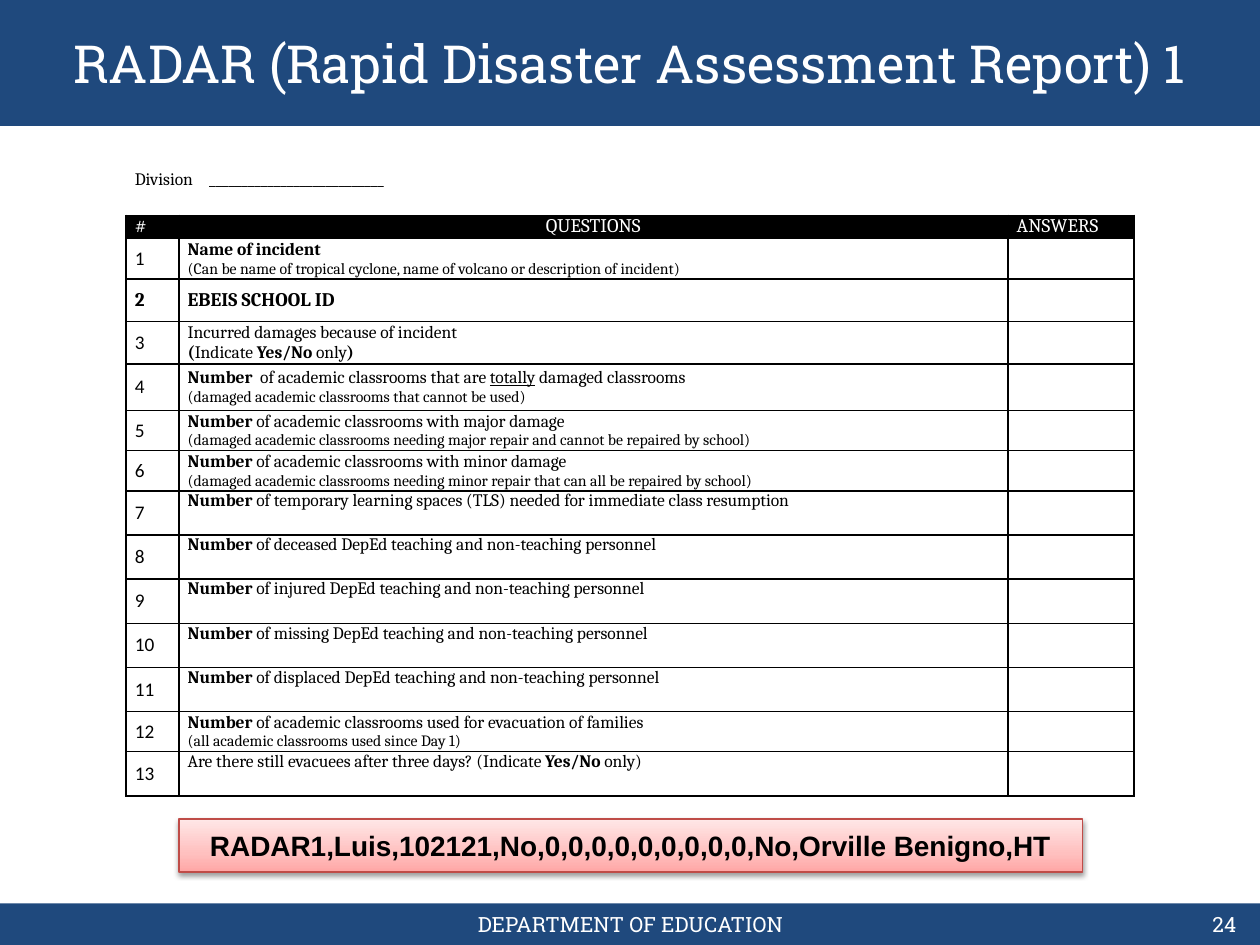
from copy import deepcopy
from dataclasses import dataclass

from pptx import Presentation
from pptx.dml.color import RGBColor
from pptx.enum.shapes import MSO_SHAPE
from pptx.enum.text import MSO_ANCHOR, PP_ALIGN
from pptx.oxml.ns import qn
from pptx.util import Inches, Pt
from lxml import etree

RECT = MSO_SHAPE.RECTANGLE
TOP, MIDDLE, BOTTOM = MSO_ANCHOR.TOP, MSO_ANCHOR.MIDDLE, MSO_ANCHOR.BOTTOM
LEFT, CENTER, RIGHT = PP_ALIGN.LEFT, PP_ALIGN.CENTER, PP_ALIGN.RIGHT


@dataclass(frozen=True)
class Theme:
    blue: str = "1F497D"
    white: str = "FFFFFF"
    black: str = "000000"
    edge: str = "BF4C48"
    glow: tuple = ((0, "FFA6A5"), (0.35, "FFC0BF"), (1, "FFE7E7"))
    slab: str = "Roboto Slab"
    serif: str = "Cambria"
    sans: str = "Calibri"
    code: str = "Arial"
    title: int = 30
    answer: int = 16
    foot: int = 12
    head: int = 11
    body: int = 10
    note: int = 9


COLS = (0.42, 6.58, 1)
HEAD = (("#", LEFT), ("QUESTIONS", CENTER), ("ANSWERS", LEFT))
TOP_ROWS = (0.34, 0.2, 0.18)
STAFF = " DepEd teaching and non-teaching personnel"
ID_ROW = 2
# Row height, question, note; *bold*, ~underlined~
ASKS = [
    (0.32, "*Name of incident*",
     "(Can be name of tropical cyclone, name of volcano or description of incident)"),
    (0.34, "*EBEIS SCHOOL ID*", ""),
    (0.33, "Incurred damages because of incident\n*(*Indicate* Yes/No *only*)*", ""),
    (0.37, "*Number  *of academic classrooms that are ~totally~ damaged classrooms",
     "(damaged academic classrooms that cannot be used)"),
    (0.32, "*Number *of academic classrooms with major damage",
     "(damaged academic classrooms needing major repair and cannot be repaired by school)"),
    (0.32, "*Number *of academic classrooms with minor damage",
     "(damaged academic classrooms needing minor repair that can all be repaired by school)"),
    (0.35, "*Number* of temporary learning spaces (TLS) needed for immediate class resumption", ""),
    *[(0.35, f"*Number* of {state}{STAFF}", "")
      for state in ("deceased", "injured", "missing", "displaced")],
    (0.32, "*Number *of academic classrooms used for evacuation of families",
     "(all academic classrooms used since Day 1)"),
    (0.35, "Are there still evacuees after three days? (Indicate *Yes/No* only)", ""),
]


class Deck:
    def __init__(self, theme):
        self.theme = theme
        self.prs = Presentation()
        self.prs.slide_width, self.prs.slide_height = Inches(10), Inches(7.5)
        self.slide = self.prs.slides.add_slide(self.prs.slide_layouts[5])

    def put(self, para, text, font, size, color, align=LEFT):
        """Fill a paragraph; * toggles bold and ~ toggles underline."""
        para.alignment = align
        for i, part in enumerate(text.split("*")):
            for j, piece in enumerate(part.split("~")):
                if piece:
                    run = para.add_run()
                    run.text = piece
                    style = {"name": font, "size": Pt(size),
                             "bold": i % 2 == 1, "underline": j % 2 == 1}
                    for key, value in style.items():
                        setattr(run.font, key, value)
                    run.font.color.rgb = RGBColor.from_string(color)

    def bar(self, box):
        shape = self.slide.shapes.add_shape(RECT, *map(Inches, box))
        shape.shadow.inherit = False
        shape.fill.solid()
        shape.fill.fore_color.rgb = RGBColor.from_string(self.theme.blue)
        shape.line.fill.background()

    def label(self, box, text, align):
        frame = self.slide.shapes.add_textbox(*map(Inches, box)).text_frame
        frame.word_wrap, frame.vertical_anchor = True, MIDDLE
        t = self.theme
        self.put(frame.paragraphs[0], text, t.slab, t.foot, t.white, align)

    def title(self, box, text):
        shape = self.slide.shapes.title
        shape.left, shape.top, shape.width, shape.height = map(Inches, box)
        shape.text_frame.vertical_anchor = MIDDLE
        t = self.theme
        self.put(shape.text_frame.paragraphs[0], text, t.slab, t.title, t.white, CENTER)
        self.slide.shapes._spTree.append(shape._element)

    def panel(self, box, text):
        """Gradient box with a soft shadow below it."""
        t = self.theme
        shape = self.slide.shapes.add_shape(RECT, *map(Inches, box))
        shape.fill.gradient()
        shape.fill.gradient_angle = 90
        stops = shape._element.spPr.find(".//" + qn("a:gsLst"))
        stops.append(deepcopy(stops[-1]))
        for stop, (place, color) in zip(shape.fill.gradient_stops, t.glow):
            stop.position = place
            stop.color.rgb = RGBColor.from_string(color)
        shape.line.color.rgb = RGBColor.from_string(t.edge)
        shape.line.width = Pt(0.75)
        shape.shadow.inherit = False
        effects = shape._element.spPr.find(qn("a:effectLst"))
        shade = etree.SubElement(effects, qn("a:outerShdw"), blurRad=str(Pt(3.1)),
                                 dist=str(Pt(1.6)), dir="5400000", rotWithShape="0")
        tone = etree.SubElement(shade, qn("a:srgbClr"), val=t.black)
        etree.SubElement(tone, qn("a:alpha"), val="38000")
        frame = shape.text_frame
        frame.word_wrap, frame.vertical_anchor = True, MIDDLE
        self.put(frame.paragraphs[0], f"*{text}*", t.code, t.answer, t.black, CENTER)

    def rule(self, cell):
        """Draw all four borders of a cell."""
        props = cell._tc.get_or_add_tcPr()
        for i, side in enumerate(("lnL", "lnR", "lnT", "lnB")):
            line = etree.Element(qn("a:" + side), w=str(Pt(1)))
            fill = etree.SubElement(line, qn("a:solidFill"))
            etree.SubElement(fill, qn("a:srgbClr"), val=self.theme.black)
            props.insert(i, line)

    def cell(self, cell, lines=(), anchor=MIDDLE):
        """Fill a cell; each line holds the arguments for put."""
        form = {"margin_left": Inches(0.07), "margin_right": Inches(0.07),
                "margin_top": 0, "margin_bottom": 0, "vertical_anchor": anchor}
        for key, value in form.items():
            setattr(cell, key, value)
        cell.fill.background()
        frame = cell.text_frame
        for i, line in enumerate(lines):
            self.put(frame.add_paragraph() if i else frame.paragraphs[0], *line)
        if not lines:
            end = frame.paragraphs[0]._p.get_or_add_endParaRPr()
            end.set("sz", str(self.theme.body * 100))

    def table(self, box):
        t = self.theme
        heights = TOP_ROWS + tuple(ask[0] for ask in ASKS)
        table = self.slide.shapes.add_table(
            len(heights), len(COLS), *map(Inches, box)).table
        table.first_row = table.horz_banding = False
        for col, width in zip(table.columns, COLS):
            col.width = Inches(width)
        for row, height in zip(table.rows, heights):
            row.height = Inches(height)

        first = table.cell(0, 0)
        first.merge(table.cell(0, 1))
        self.cell(first, [("Division\t" + "_" * 27, t.serif, t.body, t.black)], BOTTOM)
        tabs = etree.SubElement(first.text_frame.paragraphs[0]._p.get_or_add_pPr(),
                                qn("a:tabLst"))
        etree.SubElement(tabs, qn("a:tab"), pos=str(Inches(0.59)), algn="l")
        for blank in (table.cell(0, 2), *table.rows[1].cells):
            self.cell(blank)

        for cell, (text, align) in zip(table.rows[2].cells, HEAD):
            self.cell(cell, [(text, t.serif, t.head, t.white, align)], TOP)
            cell.fill.solid()
            cell.fill.fore_color.rgb = RGBColor.from_string(t.black)
            self.rule(cell)

        for num, (_, ask, note) in enumerate(ASKS, 1):
            key = num == ID_ROW
            count, query, answer = table.rows[num + 2].cells
            mark = (f"*{num}*", t.serif) if key else (str(num), t.sans)
            self.cell(count, [(*mark, t.head, t.black)])
            size = t.head if key else t.body
            lines = [(text, t.serif, size, t.black) for text in ask.split("\n")]
            if note:
                lines.append((note, t.serif, t.note, t.black))
            self.cell(query, lines, MIDDLE if key or len(lines) > 1 else TOP)
            self.cell(answer)
            for cell in (count, query, answer):
                self.rule(cell)


def main():
    deck = Deck(Theme())
    deck.bar((0, 7.17, 10, 0.33))
    deck.bar((0, 0, 10, 1))
    deck.label((3.42, 7.17, 3.17, 0.33), "DEPARTMENT OF EDUCATION", CENTER)
    deck.table((1, 1.17, 8, 5.13))
    deck.label((7.58, 7.17, 2.33, 0.33), "24", RIGHT)
    deck.panel((1.42, 6.5, 7.17, 0.42),
               "RADAR1,Luis,102121,No,0,0,0,0,0,0,0,0,0,No,Orville Benigno,HT")
    deck.title((0, 0, 10, 1), "RADAR (Rapid Disaster Assessment Report) 1")
    deck.prs.save("out.pptx")


if __name__ == "__main__":
    main()
